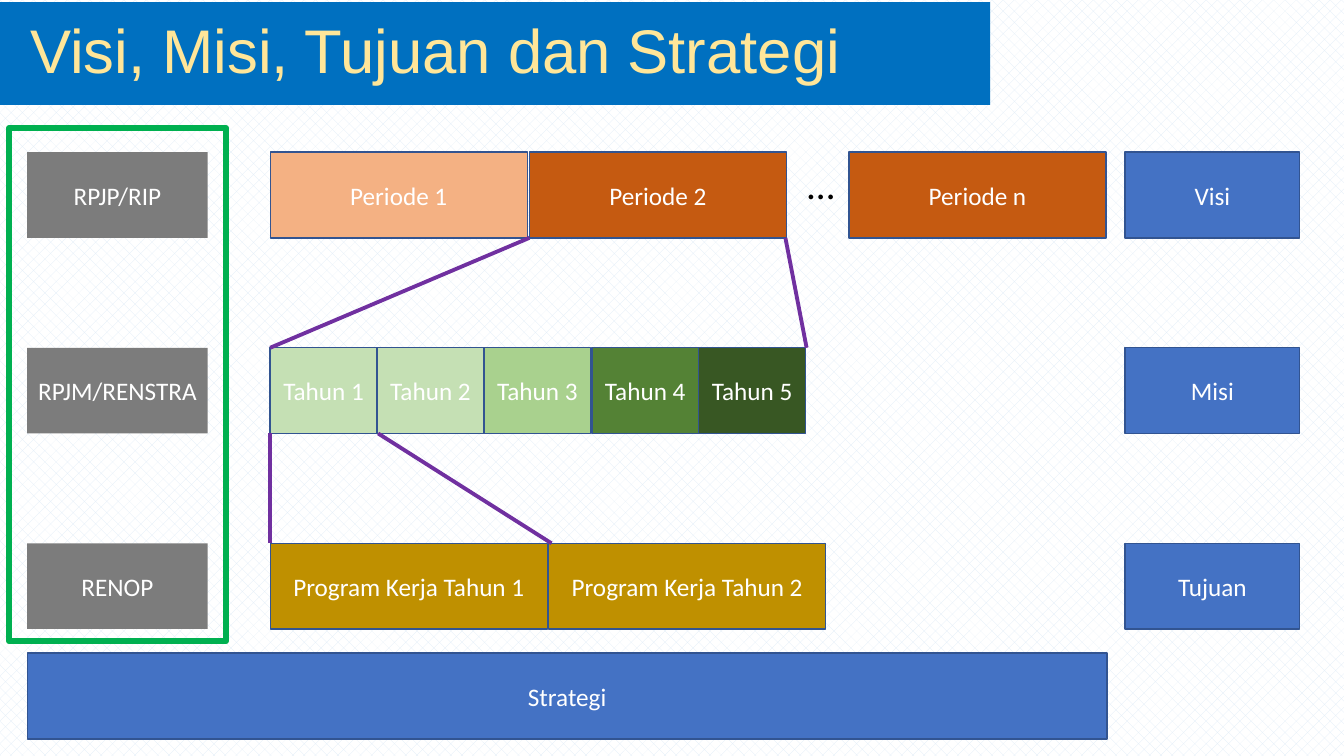
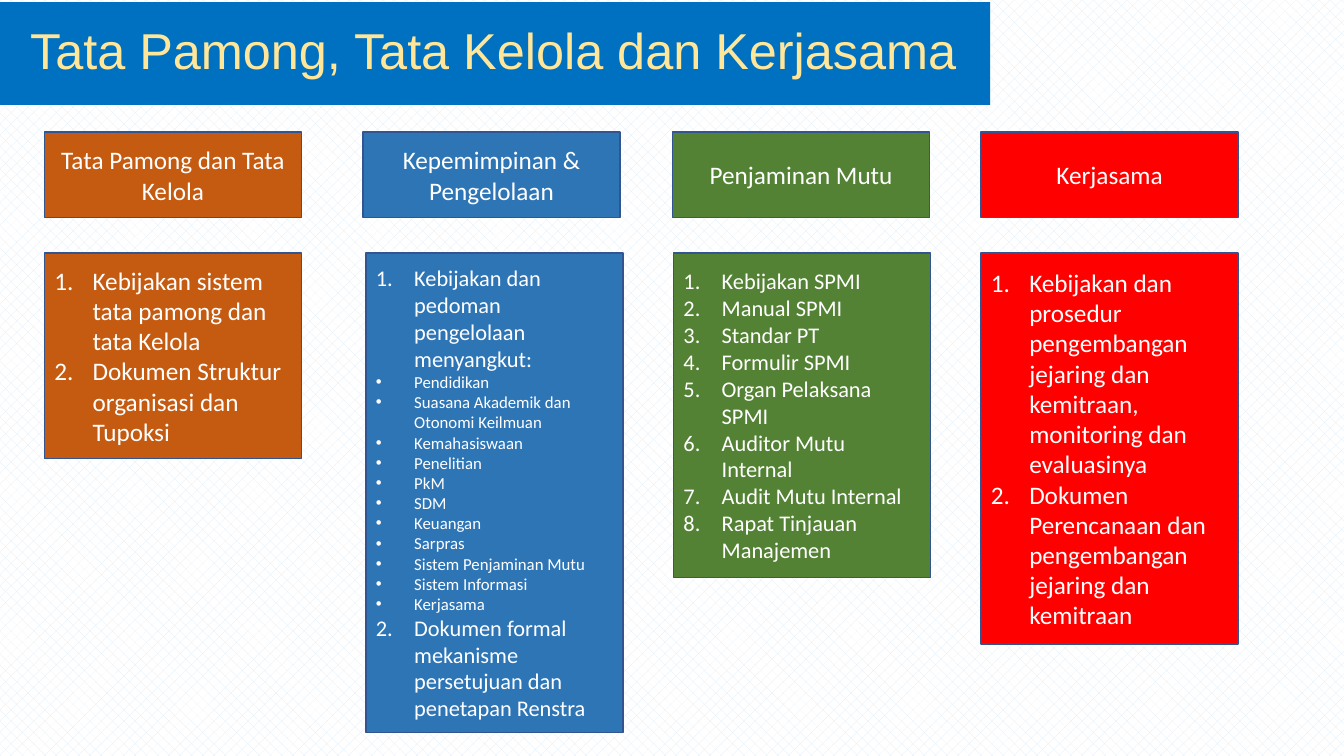
from lxml import etree
from pptx import Presentation
from pptx.dml.color import RGBColor
from pptx.enum import dml, shapes, text
from pptx.oxml import ns
from pptx.util import Pt

PX = 9144  # EMU; 100 px to the inch
WIDE, HIGH = 1333, 750

WHITE = RGBColor(0xFF, 0xFF, 0xFF)
BLACK = RGBColor(0, 0, 0)
MIST = RGBColor(0xDE, 0xEB, 0xF7)
BAND = RGBColor(0x00, 0x70, 0xC0)
CREAM = RGBColor(0xFF, 0xE6, 0x99)
EDGE = RGBColor(0x32, 0x54, 0x91)
BLUE = RGBColor(0x44, 0x72, 0xC4)
SKY = RGBColor(0x2E, 0x75, 0xB6)
GRAY = RGBColor(0x7C, 0x7C, 0x7C)
PEACH = RGBColor(0xF4, 0xB1, 0x83)
RUST = RGBColor(0xC5, 0x5A, 0x11)
PALE = RGBColor(0xC5, 0xE0, 0xB4)
LEAF = RGBColor(0xA9, 0xD1, 0x8E)
GREEN = RGBColor(0x54, 0x82, 0x35)
PINE = RGBColor(0x38, 0x57, 0x23)
GOLD = RGBColor(0xBF, 0x90, 0x00)
RED = RGBColor(0xFF, 0, 0)
FRAME = RGBColor(0x00, 0xB0, 0x50)
PURPLE = RGBColor(0x70, 0x30, 0xA0)

# Slide 1: left label, right label of each row
ROWS = [("RPJP/RIP", "Visi"), ("RPJM/RENSTRA", "Misi"), ("RENOP", "Tujuan")]
TOP, STEP, TALL = 151, 194, 85
LEFT = 268
TERMS = [("Periode 1", 268, PEACH), ("Periode 2", 525, RUST), ("Periode n", 842, RUST)]
TERM_W = 255
YEARS = [PALE, PALE, LEAF, GREEN, PINE]
YEARS_W = 532
PLAN_W, PLAN_STEP = 275, 276
LINKS = [(525, 236, 268, 345), (779, 236, 800, 345),
         (268, 430, 268, 539), (375, 430, 547, 539)]

# Slide 2: heading, heading left, list left, list height, size, colour, items
# An item is a numbered line, or a list of bulleted lines.
COLS = [
    ("Tata Pamong dan Tata Kelola", 44, 44, 204, 18, RUST, [
        "Kebijakan sistem tata pamong dan tata Kelola",
        "Dokumen Struktur organisasi dan Tupoksi"]),
    ("Kepemimpinan & Pengelolaan", 360, 363, 476, 16, SKY, [
        "Kebijakan dan pedoman pengelolaan menyangkut:",
        ["Pendidikan", "Suasana Akademik dan Otonomi Keilmuan", "Kemahasiswaan",
         "Penelitian", "PkM", "SDM", "Keuangan", "Sarpras",
         "Sistem Penjaminan Mutu", "Sistem Informasi", "Kerjasama"],
        "Dokumen formal mekanisme persetujuan dan penetapan Renstra"]),
    ("Penjaminan Mutu", 667, 668, 322, 16, GREEN, [
        "Kebijakan SPMI", "Manual SPMI", "Standar PT", "Formulir SPMI",
        "Organ Pelaksana SPMI", "Auditor Mutu Internal", "Audit Mutu Internal",
        "Rapat Tinjauan Manajemen"]),
    ("Kerjasama", 973, 973, 388, 18, RED, [
        "Kebijakan dan prosedur pengembangan jejaring dan kemitraan, "
        "monitoring dan evaluasinya",
        "Dokumen Perencanaan dan pengembangan jejaring dan kemitraan"]),
]
COL_W, HEAD_Y, LIST_Y = 255, 131, 251
HANG = 38
SMALL = 12


def style(para, size, color=WHITE, face="Calibri", align=text.PP_ALIGN.CENTER):
    para.alignment = align
    for run in para.runs:
        run.font.size, run.font.name = Pt(size), face
        run.font.color.rgb = color


def box(slide, area, fill, words="", edge=EDGE, thick=1):
    """Add a rectangle; a fill or edge of None leaves it out."""
    rect = slide.shapes.add_shape(shapes.MSO_SHAPE.RECTANGLE, *(n * PX for n in area))
    rect.shadow.inherit = False
    if fill is None:
        rect.fill.background()
    else:
        rect.fill.solid()
        rect.fill.fore_color.rgb = fill
    if edge is None:
        rect.line.fill.background()
    else:
        rect.line.color.rgb = edge
        rect.line.width = Pt(thick)
    frame = rect.text_frame
    frame.word_wrap = True
    frame.vertical_anchor = text.MSO_ANCHOR.MIDDLE
    if words:
        frame.text = words
        style(frame.paragraphs[0], 18)
    return rect


def link(slide, ends):
    line = slide.shapes.add_connector(shapes.MSO_CONNECTOR.STRAIGHT, *(n * PX for n in ends))
    line.line.color.rgb = PURPLE
    line.line.width = Pt(2.75)
    etree.SubElement(line._element.spPr, ns.qn("a:effectLst"))


def mark(para, num):
    """Give a hanging number, or a bullet when num is None."""
    props = para._p.get_or_add_pPr()
    props.set("marL", str(HANG * PX))
    props.set("indent", str(-HANG * PX))
    if num is None:
        etree.SubElement(props, ns.qn("a:buFont"), typeface="Arial")
        etree.SubElement(props, ns.qn("a:buChar"), char="•")
    else:
        auto = etree.SubElement(props, ns.qn("a:buAutoNum"), type="arabicPeriod")
        if num > 1:
            auto.set("startAt", str(num))


def fill_list(frame, items, size):
    lines, start, count = [], 1, 0
    for item in items:
        if isinstance(item, list):
            lines += [(words, None, SMALL) for words in item]
            start = count + 1
        else:
            lines.append((item, start, size))
            count += 1
    frame.text = "\n".join(words for words, _, _ in lines)
    for para, (_, num, pts) in zip(frame.paragraphs, lines):
        mark(para, num)
        style(para, pts, align=text.PP_ALIGN.LEFT)


def new_slide(prs, title, size):
    slide = prs.slides.add_slide(prs.slide_layouts[6])
    para = box(slide, (0, 2, 982, 102), BAND, title, None).text_frame.paragraphs[0]
    para._p.get_or_add_pPr().set("marL", str(20 * PX))
    para.line_spacing = 0.9
    style(para, size, CREAM, "Arial", text.PP_ALIGN.LEFT)
    return slide


def vision(prs):
    slide = new_slide(prs, "Visi, Misi, Tujuan dan Strategi", 44)
    tops = [TOP + i * STEP for i in range(len(ROWS))]
    for y, (name, goal) in zip(tops, ROWS):
        box(slide, (27, y, 179, TALL), GRAY, name, None)
        box(slide, (1116, y, 173, TALL), BLUE, goal)
    for name, x, color in TERMS:
        box(slide, (x, tops[0], TERM_W, TALL), color, name)
    dots = slide.shapes.add_textbox(*(n * PX for n in (791, 154, 38, 57))).text_frame
    dots.word_wrap = True
    dots.text = "…"
    style(dots.paragraphs[0], 28, BLACK, align=text.PP_ALIGN.LEFT)
    for i, color in enumerate(YEARS):
        x = LEFT + i * YEARS_W // len(YEARS)
        box(slide, (x, tops[1], 106, TALL), color, f"Tahun {i + 1}")
    for i in range(2):
        box(slide, (LEFT + i * PLAN_STEP, tops[2], PLAN_W, TALL), GOLD,
            f"Program Kerja Tahun {i + 1}")
    for ends in LINKS:
        link(slide, ends)
    box(slide, (27, 648, 1071, TALL), BLUE, "Strategi")
    box(slide, (9, 127, 215, 509), None, edge=FRAME, thick=4.5)


def govern(prs):
    slide = new_slide(prs, "Tata Pamong, Tata Kelola dan Kerjasama", 36)
    for head, x, list_x, tall, size, color, items in COLS:
        box(slide, (x, HEAD_Y, COL_W, TALL), color, head)
        body = box(slide, (list_x, LIST_Y, COL_W, tall), color)
        fill_list(body.text_frame, items, size)


def main():
    prs = Presentation()
    prs.slide_width, prs.slide_height = WIDE * PX, HIGH * PX
    back = prs.slide_master.background.fill
    back.patterned()
    back.pattern = dml.MSO_PATTERN.PERCENT_25
    back.fore_color.rgb, back.back_color.rgb = MIST, WHITE
    vision(prs)
    govern(prs)
    prs.save("out.pptx")


if __name__ == "__main__":
    main()
